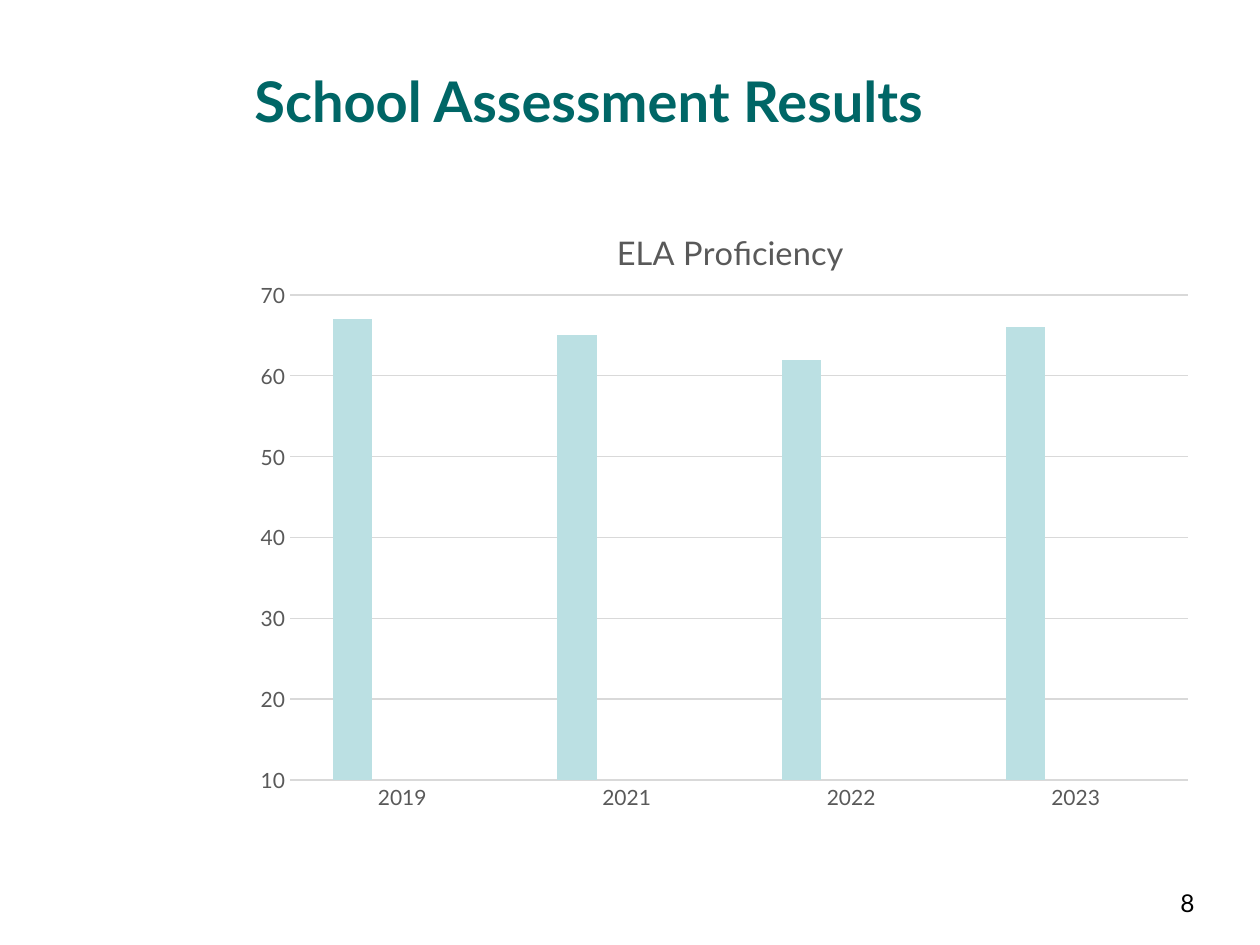
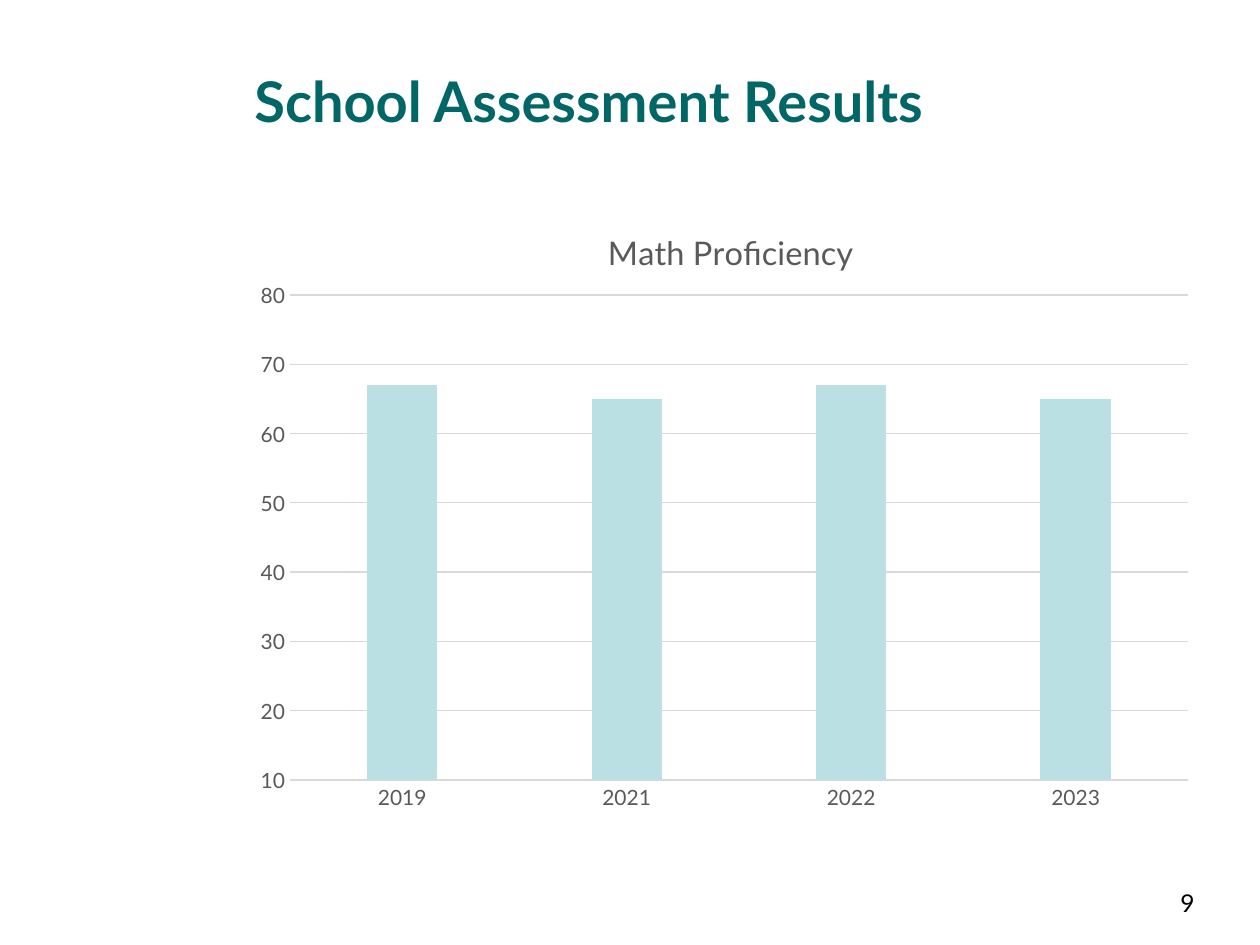
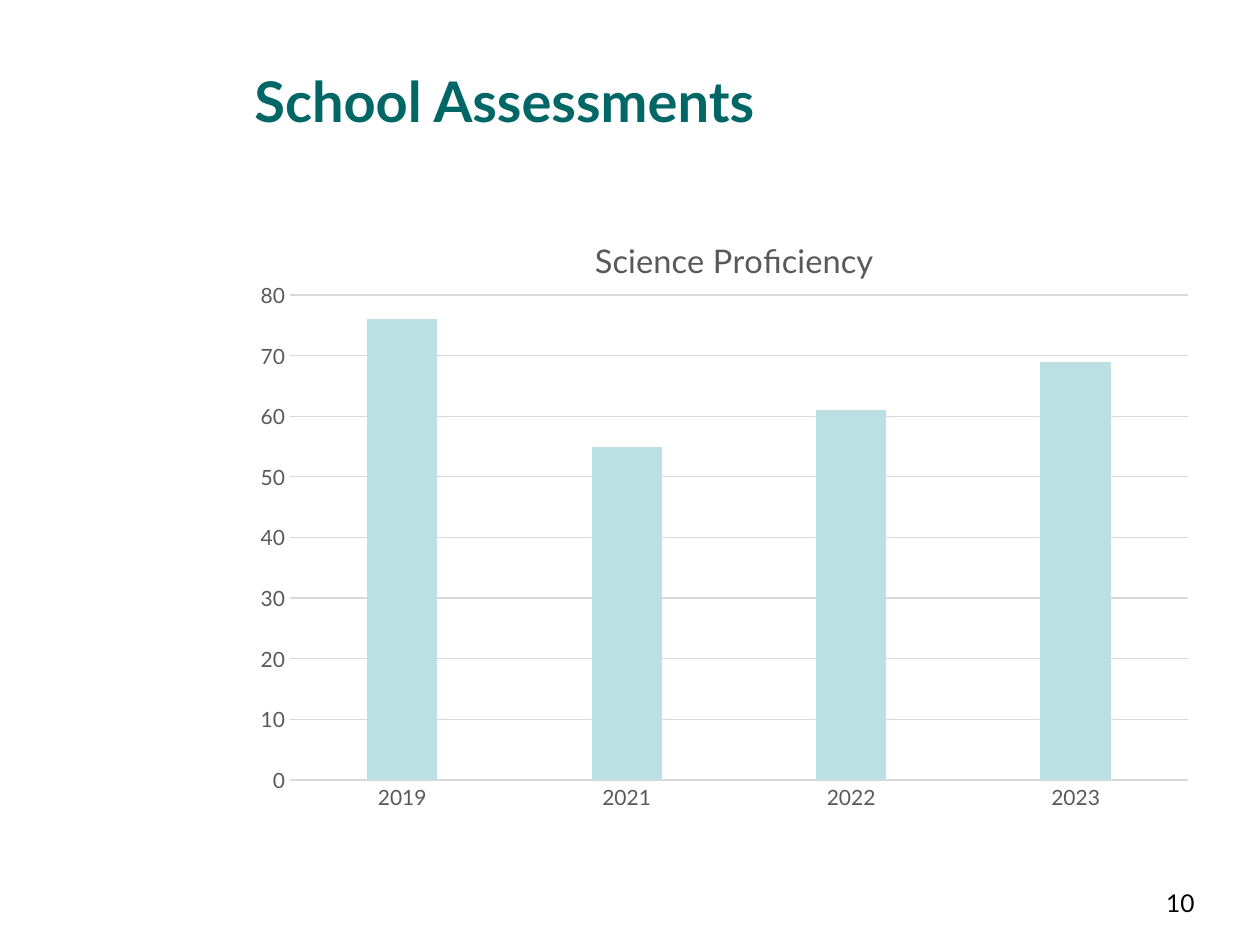
from lxml.etree import SubElement
from pptx import Presentation
from pptx.chart.data import CategoryChartData as ChartData
from pptx.dml.color import RGBColor
from pptx.enum.chart import XL_CHART_TYPE as Kind, XL_TICK_MARK as Tick
from pptx.enum.text import MSO_ANCHOR as Anchor, PP_ALIGN as Align
from pptx.oxml.ns import qn
from pptx.util import Emu, Pt

# Content: heading, chart title, its left and top, axis range, series, page
YEARS = ["2019", "2021", "2022", "2023"]
EMPTY = [None] * len(YEARS)
SLIDES = [
    ("School Assessment Results", "ELA Proficiency", (611, 223), (10, 70),
     [[67, 65, 62, 66], EMPTY, EMPTY], 8),
    ("School Assessment Results", "Math Proficiency", (602, 223), (10, 80),
     [[67, 65, 67, 65]], 9),
    ("School Assessments", "Science Proficiency", (589, 231), (0, 80),
     [[76, 55, 61, 69]], 10),
]

# Shared style
FONT = "Lato"
TEAL = RGBColor(0x00, 0x66, 0x66)
BLACK = RGBColor(0x00, 0x00, 0x00)
GREY = RGBColor(0x59, 0x59, 0x59)
RULE = RGBColor(0xD9, 0xD9, 0xD9)
BARS = [RGBColor(0xBB, 0xE0, 0xE3), RGBColor(0x33, 0x33, 0x99),
        RGBColor(0xFF, 0xFF, 0xFF)]

# Places in px: left, top, width, height
PX = 914400 // 126
HEAD = (242, 42, 966, 116)
CHART = (242, 193, 966, 630)
PLOT = (290, 295, 898, 485)
PAGE = (1018, 882, 189, 63)


def scale(box):
    return [Emu(n * PX) for n in box]


def style(font, size, color, bold=False):
    font.name, font.size, font.bold = FONT, Pt(size), bold
    font.color.rgb = color


def add_text(slide, box, text, size, color, bold=False,
             align=Align.LEFT, anchor=Anchor.TOP):
    frame = slide.shapes.add_textbox(*scale(box)).text_frame
    frame.word_wrap = True
    frame.vertical_anchor = anchor
    frame.text = text
    para = frame.paragraphs[0]
    para.alignment = align
    style(para.runs[0].font, size, color, bold)


def place(node, index, box, inner=False):
    """Pin a chart part at a px box, as fractions of the chart."""
    for old in node.findall(qn("c:layout")):
        node.remove(old)
    layout = SubElement(node, qn("c:layout"))
    node.insert(index, layout)
    manual = SubElement(layout, qn("c:manualLayout"))
    parts = [("layoutTarget", "inner")] if inner else []
    parts += [("xMode", "edge"), ("yMode", "edge")]
    left, top, wide, high = CHART
    start = (left, top, 0, 0)
    span = (wide, high, wide, high)
    parts += [(key, f"{(n - s) / d:.4f}")
              for key, n, s, d in zip("xywh", box, start, span)]
    for key, val in parts:
        SubElement(manual, qn("c:" + key)).set("val", val)


def add_bars(slide, title, spot, limits, rows):
    data = ChartData()
    data.categories = YEARS
    for num, row in enumerate(rows, 1):
        data.add_series(f"Series {num}", row)
    chart = slide.shapes.add_chart(
        Kind.COLUMN_CLUSTERED, *scale(CHART), data).chart
    style(chart.font, 10, BLACK)
    chart.has_legend = False

    # Title
    chart.has_title = True
    frame = chart.chart_title.text_frame
    frame.text = title
    style(frame.paragraphs[0].runs[0].font, 18.6, GREY)
    root = chart._chartSpace.chart
    place(root.find(qn("c:title")), 1, spot)
    place(root.plotArea, 0, PLOT, inner=True)

    # Bars
    plot = chart.plots[0]
    plot.gap_width, plot.overlap = 219, -27
    plot.vary_by_categories = False
    for series, color in zip(plot.series, BARS):
        series.format.fill.solid()
        series.format.fill.fore_color.rgb = color

    # Axes
    years, values = chart.category_axis, chart.value_axis
    for axis in (years, values):
        axis.major_tick_mark = axis.minor_tick_mark = Tick.NONE
        style(axis.tick_labels.font, 12, GREY)
    values.minimum_scale, values.maximum_scale = limits
    values.major_unit = 10
    values.format.line.fill.background()
    for line in (years.format.line, values.major_gridlines.format.line):
        line.color.rgb = RULE
        line.width = Pt(0.75)


def main():
    deck = Presentation()
    deck.slide_width, deck.slide_height = scale((1260, 945))
    for head, title, spot, limits, rows, page in SLIDES:
        slide = deck.slides.add_slide(deck.slide_layouts[6])
        add_text(slide, HEAD, head, 32, TEAL, True, anchor=Anchor.MIDDLE)
        add_bars(slide, title, spot, limits, rows)
        add_text(slide, PAGE, str(page), 14, BLACK, align=Align.RIGHT)
    deck.save("out.pptx")


if __name__ == "__main__":
    main()
